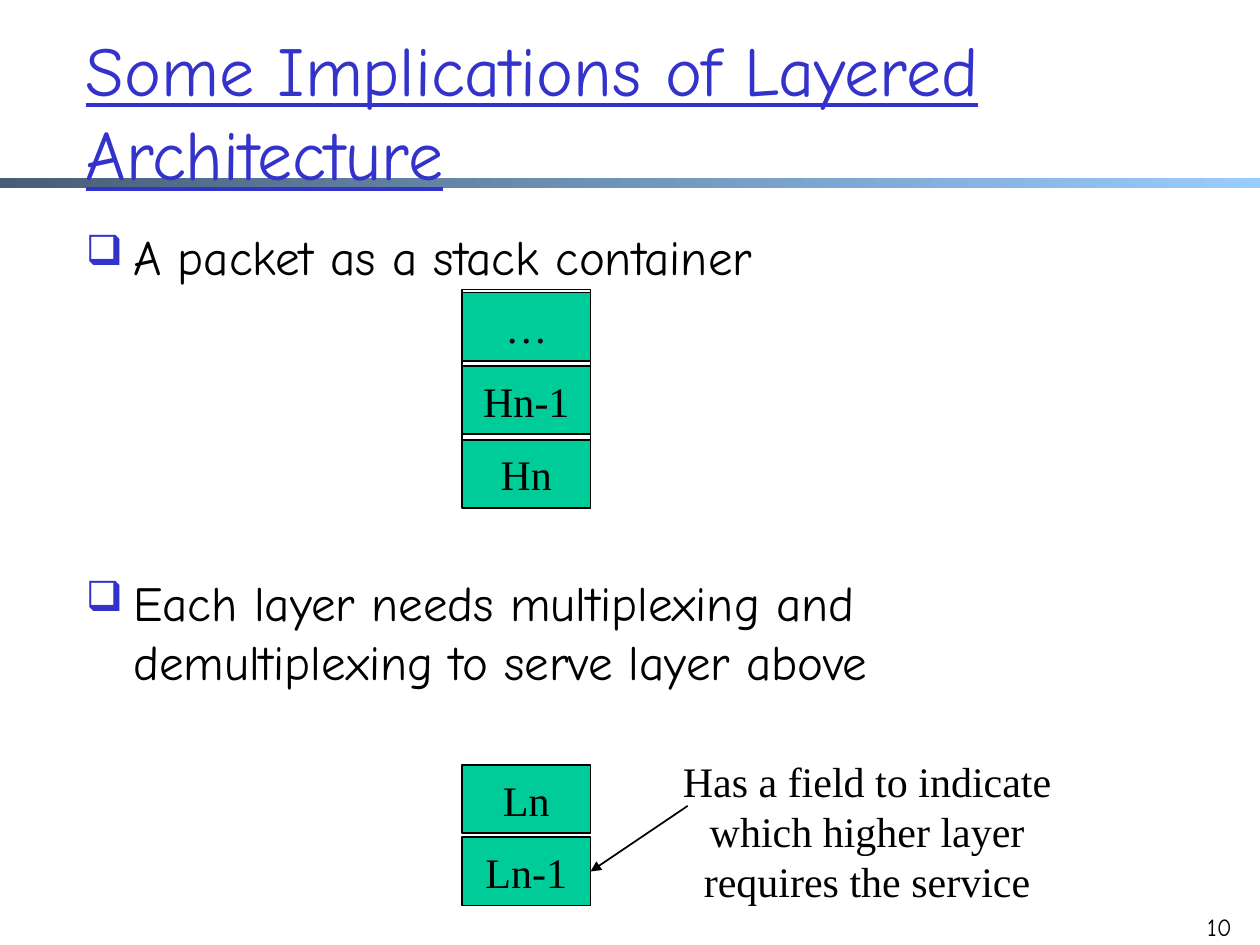
from dataclasses import dataclass

from lxml.etree import SubElement
from pptx import Presentation
from pptx.dml.color import RGBColor
from pptx.enum.shapes import MSO_CONNECTOR as Connector, MSO_SHAPE as Shape
from pptx.enum.text import MSO_ANCHOR as Anchor, PP_ALIGN as Align
from pptx.oxml.ns import qn
from pptx.util import Pt


@dataclass(frozen=True)
class Theme:
    ink: RGBColor = RGBColor(0x00, 0x00, 0x00)
    accent: RGBColor = RGBColor(0x33, 0x33, 0xCC)
    block: RGBColor = RGBColor(0x00, 0xCC, 0x99)
    rule_dark: RGBColor = RGBColor(0x47, 0x5E, 0x76)
    rule_light: RGBColor = RGBColor(0x99, 0xCC, 0xFF)
    hand: str = "Comic Neue"
    serif: str = "Times New Roman"
    title: int = 40
    body: int = 28
    label: int = 24
    number: int = 14


theme = Theme()


def write(paragraph, text, font, size, color=theme.ink, align=Align.LEFT):
    paragraph.alignment = align
    run = paragraph.add_run()
    run.text = text
    run.font.name = font
    run.font.size = Pt(size)
    run.font.color.rgb = color
    return run


def add_text_frame(left, top, width, height, anchor=Anchor.TOP):
    frame = slide.shapes.add_textbox(Pt(left), Pt(top), Pt(width), Pt(height)).text_frame
    frame.word_wrap = True
    frame.vertical_anchor = anchor
    return frame


deck = Presentation()
deck.slide_width, deck.slide_height = Pt(720), Pt(540)
slide = deck.slides.add_slide(deck.slide_layouts[6])

# Gradient rule under the title
rule = slide.shapes.add_shape(Shape.RECTANGLE, Pt(0), Pt(101.5), Pt(720), Pt(6))
rule.shadow.inherit = False
rule.line.fill.background()
rule.fill.gradient()
rule.fill.gradient_angle = 0
for stop, color in zip(rule.fill.gradient_stops, (theme.rule_dark, theme.rule_light)):
    stop.color.rgb = color
rule.fill.gradient_stops[0].position = 0
rule.fill.gradient_stops[1].position = 1

# Title
title = add_text_frame(42, 18, 612, 90, Anchor.MIDDLE)
heading = write(title.paragraphs[0], "Some Implications of Layered Architecture",
                theme.hand, theme.title, theme.accent)
heading.font.underline = True

# Bulleted points, the second one below the header stack
points = add_text_frame(42, 126, 612, 366)
for index, (text, gap) in enumerate([
    ("A packet as a stack container", 5.6),
    ("Each layer needs multiplexing and demultiplexing to serve layer above", 164),
]):
    point = points.add_paragraph() if index else points.paragraphs[0]
    point.space_before = Pt(gap)
    write(point, text, theme.hand, theme.body)
    props = point._p.get_or_add_pPr()
    props.set("marL", str(Pt(27)))
    props.set("indent", str(Pt(-27)))
    bullet_color = SubElement(props, qn("a:buClr"))
    SubElement(bullet_color, qn("a:srgbClr")).set("val", str(theme.accent))
    SubElement(props, qn("a:buSzPct")).set("val", "85000")
    SubElement(props, qn("a:buChar")).set("char", "❑")

# Slide number
number = add_text_frame(675, 517.5, 36, 36)
write(number.paragraphs[0], "10", theme.hand, theme.number, align=Align.RIGHT)

# Packet outline, its headers, and the two layers
block_left, block_width, block_height = 264, 73.5, 39
for text, top, height in [
    ("", 165.5, 124.5),
    ("Hn", 251.25, block_height),
    ("Hn-1", 209.25, block_height),
    ("…", 167.25, block_height),
    ("Ln-1", 478.5, block_height),
    ("Ln", 437.25, block_height),
]:
    block = slide.shapes.add_shape(Shape.RECTANGLE, Pt(block_left), Pt(top),
                                   Pt(block_width), Pt(height))
    block.shadow.inherit = False
    block.line.color.rgb = theme.ink
    block.line.width = Pt(1)
    if text:
        block.fill.solid()
        block.fill.fore_color.rgb = theme.block
        block.text_frame.word_wrap = False
        block.text_frame.vertical_anchor = Anchor.MIDDLE
        write(block.text_frame.paragraphs[0], text, theme.serif, theme.label,
              align=Align.CENTER)
    else:
        block.fill.background()

# Note on the lower layer
note = add_text_frame(377, 428, 237, 94)
note.paragraphs[0].line_spacing = Pt(28.8)
write(note.paragraphs[0], "Has a field to indicate which higher layer requires the service",
      theme.serif, theme.label, align=Align.CENTER)

# Arrow from the note to the lower layer
arrow = slide.shapes.add_connector(Connector.STRAIGHT, Pt(393), Pt(460.5),
                                   Pt(block_left + block_width), Pt(498))
arrow.line.color.rgb = theme.ink
arrow.line.width = Pt(1)
SubElement(arrow.line._get_or_add_ln(), qn("a:tailEnd")).set("type", "triangle")
SubElement(arrow._element.spPr, qn("a:effectLst"))

deck.save("out.pptx")
